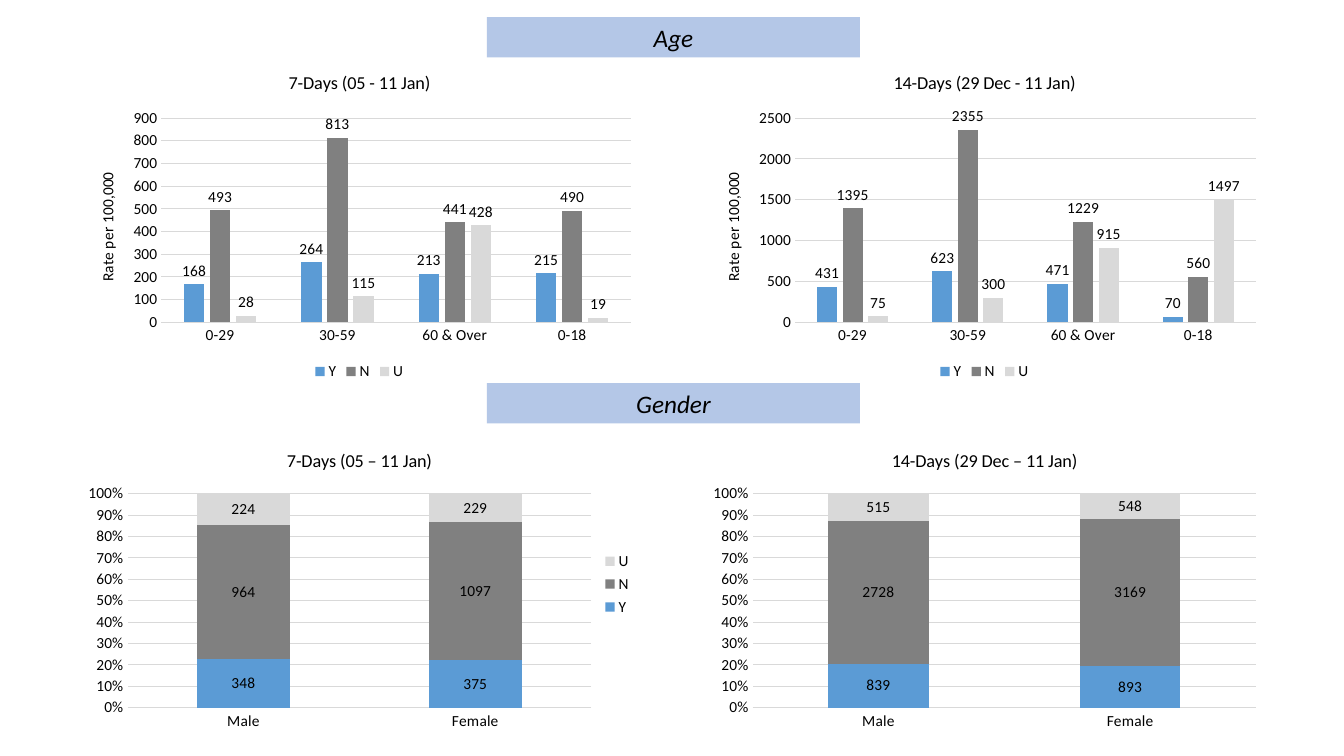
"""Build the age and gender rate slide with four column charts."""
from lxml.etree import SubElement
from pptx import Presentation
from pptx.chart.data import CategoryChartData
from pptx.dml.color import RGBColor
from pptx.enum.chart import XL_CHART_TYPE, XL_LABEL_POSITION, XL_LEGEND_POSITION, XL_TICK_MARK
from pptx.enum.shapes import MSO_SHAPE
from pptx.enum.text import MSO_ANCHOR, MSO_AUTO_SIZE, PP_ALIGN
from pptx.oxml.ns import qn
from pptx.util import Emu, Pt

PX = 9144
FONT = "Calibri"
BLACK = RGBColor(0x00, 0x00, 0x00)
BANNER = RGBColor(0xB4, 0xC7, 0xE7)
BLUE = RGBColor(0x5B, 0x9B, 0xD5)
GREY = RGBColor(0x80, 0x80, 0x80)
LIGHT = RGBColor(0xD9, 0xD9, 0xD9)
COLORS = [BLUE, GREY, LIGHT]

LEFT_X, RIGHT_X, CHART_W = 76, 696, 561
AGES = ["0-29", "30-59", "60 & Over", "0-18"]
GENDERS = ["Male", "Female"]
ANSWERS = ["Y", "N", "U"]
RATE = "Rate per 100,000"


def px(n):
    """Turn slide px into EMU."""
    return Emu(n * PX)


def style_font(font, size=11, bold=False, italic=False, color=BLACK):
    """Set the face, size, weight and colour of a font."""
    font.name, font.size, font.bold, font.italic = FONT, Pt(size), bold, italic
    font.color.rgb = color


def put_text(tf, text, align=PP_ALIGN.CENTER, **fmt):
    """Write one formatted paragraph into a text frame."""
    p = tf.paragraphs[0]
    p.alignment = align
    r = p.add_run()
    r.text = text
    style_font(r.font, **fmt)


def add_banner(s, text, y):
    """Add a section heading bar."""
    sp = s.shapes.add_shape(MSO_SHAPE.RECTANGLE, px(483), px(y), px(370), px(40))
    sp.shadow.inherit = False
    sp.fill.solid()
    sp.fill.fore_color.rgb = BANNER
    sp.line.fill.background()
    tf = sp.text_frame
    tf.word_wrap = True
    tf.auto_size = MSO_AUTO_SIZE.SHAPE_TO_FIT_TEXT
    tf.vertical_anchor = MSO_ANCHOR.TOP
    put_text(tf, text, size=18, italic=True)


def place_plot(chart, x, y, w, h):
    """Fix the inner plot area as fractions of the chart."""
    plot_area = chart.element.find(".//" + qn("c:plotArea"))
    for old in plot_area.findall(qn("c:layout")):
        plot_area.remove(old)
    layout = SubElement(plot_area, qn("c:layout"))
    plot_area.insert(0, layout)
    manual = SubElement(layout, qn("c:manualLayout"))
    settings = {"layoutTarget": "inner", "xMode": "edge", "yMode": "edge",
                "x": x, "y": y, "w": w, "h": h}
    for name, value in settings.items():
        SubElement(manual, qn("c:" + name)).set("val", str(value))


def style_axes(chart, top, unit, number_format, title):
    """Format both axes and the gridlines."""
    cat, val = chart.category_axis, chart.value_axis
    for axis in (cat, val):
        axis.major_tick_mark = axis.minor_tick_mark = XL_TICK_MARK.NONE
        style_font(axis.tick_labels.font)
    val.minimum_scale, val.maximum_scale, val.major_unit = 0, top, unit
    val.tick_labels.number_format = number_format
    val.tick_labels.number_format_is_linked = False
    val.format.line.fill.background()
    for line in (cat.format.line, val.major_gridlines.format.line):
        line.color.rgb = LIGHT
        line.width = Pt(0.75)
    if title:
        put_text(val.axis_title.text_frame, title)


def style_series(plot, label_position):
    """Colour the series and show their values."""
    plot.vary_by_categories = False
    for series, color in zip(plot.series, COLORS):
        series.format.fill.solid()
        series.format.fill.fore_color.rgb = color
        labels = series.data_labels
        labels.show_value = True
        labels.number_format = "0"
        labels.number_format_is_linked = False
        labels.position = label_position
        style_font(labels.font)


def add_column_chart(s, box, title, cats, names, rows, plot_box, top, unit,
                     stacked=False, legend=None, axis_title=None):
    """Add a clustered or fully stacked column chart."""
    data = CategoryChartData(number_format="0")
    data.categories = cats
    for name, values in zip(names, rows):
        data.add_series(name, values)
    kind = XL_CHART_TYPE.COLUMN_STACKED_100 if stacked else XL_CHART_TYPE.COLUMN_CLUSTERED
    chart = s.shapes.add_chart(kind, *map(px, box), data).chart
    style_font(chart.font)
    put_text(chart.chart_title.text_frame, title, size=13)
    chart.chart_title.include_in_layout = False
    plot = chart.plots[0]
    plot.gap_width, plot.overlap = (150, 100) if stacked else (219, -27)
    style_series(plot, XL_LABEL_POSITION.CENTER if stacked else XL_LABEL_POSITION.OUTSIDE_END)
    style_axes(chart, top, unit, "0%" if stacked else "0", axis_title)
    chart.has_legend = legend is not None
    if chart.has_legend:
        chart.legend.position = legend
        chart.legend.include_in_layout = False
        style_font(chart.legend.font)
    place_plot(chart, *plot_box)


def add_age_chart(s, x, title, rows, plot_box, top, unit):
    """Add a chart of rates by age group."""
    add_column_chart(s, (x, 55, CHART_W, 327), title, AGES, ANSWERS, rows, plot_box, top, unit,
                     legend=XL_LEGEND_POSITION.BOTTOM, axis_title=RATE)


def add_gender_chart(s, x, title, names, rows, plot_box, legend=None):
    """Add a chart of shares by gender."""
    add_column_chart(s, (x, 430, CHART_W, 299), title, GENDERS, names, rows, plot_box, 1, 0.1,
                     stacked=True, legend=legend)


def main():
    """Build and save the slide."""
    prs = Presentation()
    prs.slide_width, prs.slide_height = px(1333), px(750)
    s = prs.slides.add_slide(prs.slide_layouts[6])
    add_age_chart(s, LEFT_X, "7-Days (05 - 11 Jan)",
                  [(168, 264, 213, 215), (493, 813, 441, 490), (28, 115, 428, 19)],
                  (0.15, 0.19, 0.83, 0.62), 900, 100)
    add_age_chart(s, RIGHT_X, "14-Days (29 Dec - 11 Jan)",
                  [(431, 623, 471, 70), (1395, 2355, 1229, 560), (75, 300, 915, 1497)],
                  (0.165, 0.19, 0.815, 0.62), 2500, 500)
    add_gender_chart(s, LEFT_X, "7-Days (05 – 11 Jan)", ANSWERS,
                     [(348, 375), (964, 1097), (224, 229)],
                     (0.09, 0.2, 0.82, 0.71), XL_LEGEND_POSITION.RIGHT)
    add_gender_chart(s, RIGHT_X, "14-Days (29 Dec – 11 Jan)",
                     ["Series 1", "Series 2", "Series 3"],
                     [(839, 893), (2728, 3169), (515, 548)],
                     (0.09, 0.2, 0.89, 0.71))
    add_banner(s, "Age", 17)
    add_banner(s, "Gender", 380)
    prs.save("out.pptx")


if __name__ == "__main__":
    main()
